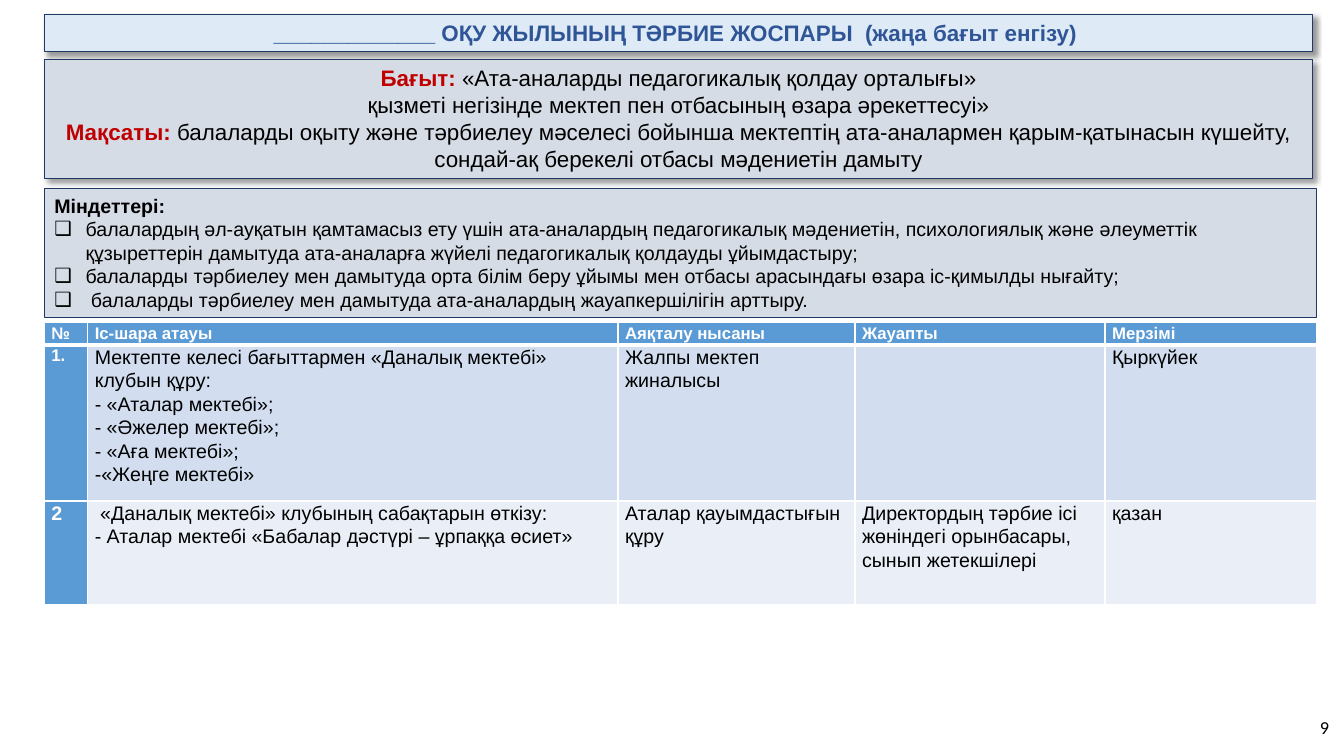
from lxml.etree import SubElement
from pptx import Presentation
from pptx.dml.color import RGBColor
from pptx.enum.shapes import MSO_SHAPE as Preset
from pptx.enum.text import MSO_ANCHOR as Anchor, MSO_AUTO_SIZE as AutoSize, PP_ALIGN as Align
from pptx.oxml.ns import qn
from pptx.util import Pt

PX = 9144
COLORS = {
    "black": "000000", "white": "FFFFFF", "red": "C00000", "navy": "203864",
    "title": "2F5597", "pale": "DEEBF7", "gray": "D6DCE5",
    "blue": "5B9BD5", "band_dark": "D2DEEF", "band_light": "EAEFF7",
}
TITLE = "_____________ ОҚУ ЖЫЛЫНЫҢ ТӘРБИЕ ЖОСПАРЫ  (жаңа бағыт енгізу) "
DIRECTION = [
    ("Бағыт: ", "«Ата-аналарды педагогикалық қолдау орталығы»"),
    ("", "қызметі негізінде мектеп пен отбасының өзара әрекеттесуі»"),
    ("Мақсаты: ", "балаларды оқыту және тәрбиелеу мәселесі бойынша мектептің ата-аналармен "
     "қарым-қатынасын күшейту, сондай-ақ берекелі отбасы мәдениетін дамыту"),
]
TASKS = [
    "балалардың әл-ауқатын қамтамасыз ету үшін ата-аналардың педагогикалық мәдениетін, "
    "психологиялық және әлеуметтік құзыреттерін дамытуда ата-аналарға жүйелі педагогикалық "
    "қолдауды ұйымдастыру;",
    "балаларды тәрбиелеу мен дамытуда орта білім беру ұйымы мен отбасы арасындағы өзара "
    "іс-қимылды нығайту;",
    " балаларды тәрбиелеу мен дамытуда ата-аналардың жауапкершілігін арттыру.",
]
PLAN = [
    [["№"], ["Іс-шара атауы"], ["Аяқталу нысаны"], ["Жауапты"], ["Мерзімі"]],
    [["1."],
     ["Мектепте келесі бағыттармен «Даналық мектебі» клубын құру:", "- «Аталар мектебі»;",
      "- «Әжелер мектебі»;", "- «Аға мектебі»;", "-«Жеңге мектебі»"],
     ["Жалпы мектеп жиналысы"], [], ["Қыркүйек"]],
    [["2"],
     [" «Даналық мектебі» клубының сабақтарын өткізу:",
      "- Аталар мектебі «Бабалар дәстүрі – ұрпаққа өсиет»"],
     ["Аталар қауымдастығын құру"],
     ["Директордың тәрбие ісі жөніндегі орынбасары, сынып жетекшілері"], ["қазан"]],
]
COLUMN_WIDTHS = [43, 526, 235, 248, 210]
ROW_HEIGHTS = [22, 155, 103]
ROW_FILLS = ["blue", "band_dark", "band_light"]


def rgb(name):
    return RGBColor.from_string(COLORS[name])


def scaled(box):
    return [length * PX for length in box]


def add_run(paragraph, text, size=14, color="black", bold=False, font="Arial"):
    run = paragraph.add_run()
    run.text = text
    run.font.size = Pt(size)
    run.font.name = font
    run.font.bold = bold
    run.font.color.rgb = rgb(color)


def next_paragraph(frame, index):
    return frame.add_paragraph() if index else frame.paragraphs[0]


def add_panel(slide, box, fill, shadow=False):
    shape = slide.shapes.add_shape(Preset.RECTANGLE, *scaled(box))
    shape.shadow.inherit = False
    shape.fill.solid()
    shape.fill.fore_color.rgb = rgb(fill)
    shape.line.color.rgb = rgb("navy")
    shape.line.width = Pt(0.75)
    if shadow:
        effects = shape._element.spPr.find(qn("a:effectLst"))
        outer = SubElement(effects, qn("a:outerShdw"), blurRad=str(Pt(4)), dist=str(Pt(3)),
                           dir="2700000", algn="tl", rotWithShape="0")
        color = SubElement(outer, qn("a:srgbClr"), val=COLORS["black"])
        SubElement(color, qn("a:alpha"), val="40000")
    frame = shape.text_frame
    frame.word_wrap = True
    frame.auto_size = AutoSize.SHAPE_TO_FIT_TEXT
    frame.vertical_anchor = Anchor.TOP
    return frame


def add_title(slide, box):
    paragraph = add_panel(slide, box, "pale", shadow=True).paragraphs[0]
    paragraph.alignment = Align.CENTER
    add_run(paragraph, TITLE, size=16, color="title", bold=True)


def add_direction(slide, box):
    frame = add_panel(slide, box, "gray", shadow=True)
    for index, (label, text) in enumerate(DIRECTION):
        paragraph = next_paragraph(frame, index)
        paragraph.alignment = Align.CENTER
        if label:
            add_run(paragraph, label, size=16, color="red", bold=True)
        add_run(paragraph, text, size=16)


def add_bullet(paragraph, indent):
    properties = paragraph._p.get_or_add_pPr()
    properties.set("marL", str(indent * PX))
    properties.set("indent", str(-indent * PX))
    color = SubElement(properties, qn("a:buClr"))
    SubElement(color, qn("a:srgbClr"), val=COLORS["black"])
    SubElement(properties, qn("a:buFont"), typeface="Arial")
    SubElement(properties, qn("a:buChar"), char="❑")


def add_tasks(slide, box):
    frame = add_panel(slide, box, "gray")
    heading = frame.paragraphs[0]
    heading.alignment = Align.LEFT
    add_run(heading, "Міндеттері:", bold=True)
    for task in TASKS:
        paragraph = frame.add_paragraph()
        paragraph.alignment = Align.LEFT
        add_bullet(paragraph, 31)
        add_run(paragraph, task)


def set_borders(cell, top, bottom):
    properties = cell._tc.get_or_add_tcPr()
    for side, width in (("L", 1), ("R", 1), ("T", top), ("B", bottom)):
        line = SubElement(properties, qn(f"a:ln{side}"), w=str(Pt(width)))
        solid = SubElement(line, qn("a:solidFill"))
        SubElement(solid, qn("a:srgbClr"), val=COLORS["white"])


def fill_cell(cell, lines, fill, **style):
    cell.margin_left = cell.margin_right = 7 * PX
    cell.margin_top = cell.margin_bottom = 0
    cell.fill.solid()
    cell.fill.fore_color.rgb = rgb(fill)
    for index, line in enumerate(lines):
        paragraph = next_paragraph(cell.text_frame, index)
        paragraph.line_spacing = 1.07
        add_run(paragraph, line, **style)


def add_plan(slide, box):
    table = slide.shapes.add_table(len(PLAN), len(COLUMN_WIDTHS), *scaled(box)).table
    table.first_row = table.horz_banding = False
    for column, width in zip(table.columns, COLUMN_WIDTHS):
        column.width = width * PX
    for row, height in zip(table.rows, ROW_HEIGHTS):
        row.height = height * PX
    for r, cells in enumerate(PLAN):
        for c, lines in enumerate(cells):
            cell = table.cell(r, c)
            heading = r == 0 or c == 0
            set_borders(cell, top=3 if r == 1 else 1, bottom=3 if r == 0 else 1)
            fill_cell(cell, lines, "blue" if heading else ROW_FILLS[r],
                      size=12 if r == 0 or (r, c) == (1, 0) else 14,
                      color="white" if heading else "black", bold=heading)


def add_page_number(slide, box):
    frame = slide.shapes.add_textbox(*scaled(box)).text_frame
    frame.word_wrap = True
    frame.vertical_anchor = Anchor.MIDDLE
    paragraph = frame.paragraphs[0]
    paragraph.alignment = Align.RIGHT
    add_run(paragraph, "9", size=13, font="Calibri")


def main():
    presentation = Presentation()
    presentation.slide_width, presentation.slide_height = scaled((1333, 750))
    slide = presentation.slides.add_slide(presentation.slide_layouts[6])
    add_page_number(slide, (1248, 693, 80, 57))
    add_title(slide, (44, 14, 1258, 37))
    add_direction(slide, (44, 59, 1258, 118))
    add_tasks(slide, (44, 187, 1262, 128))
    add_plan(slide, (44, 320, sum(COLUMN_WIDTHS), sum(ROW_HEIGHTS)))
    presentation.save("out.pptx")


if __name__ == "__main__":
    main()
